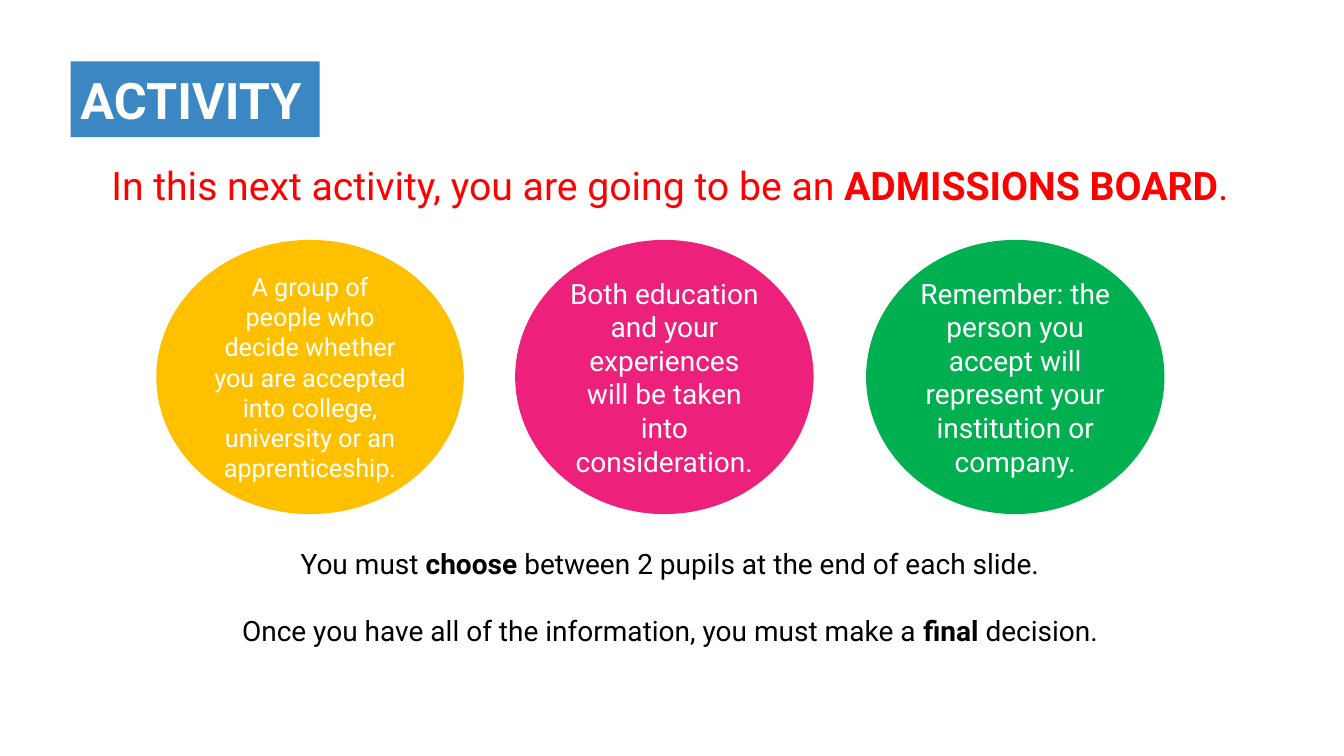
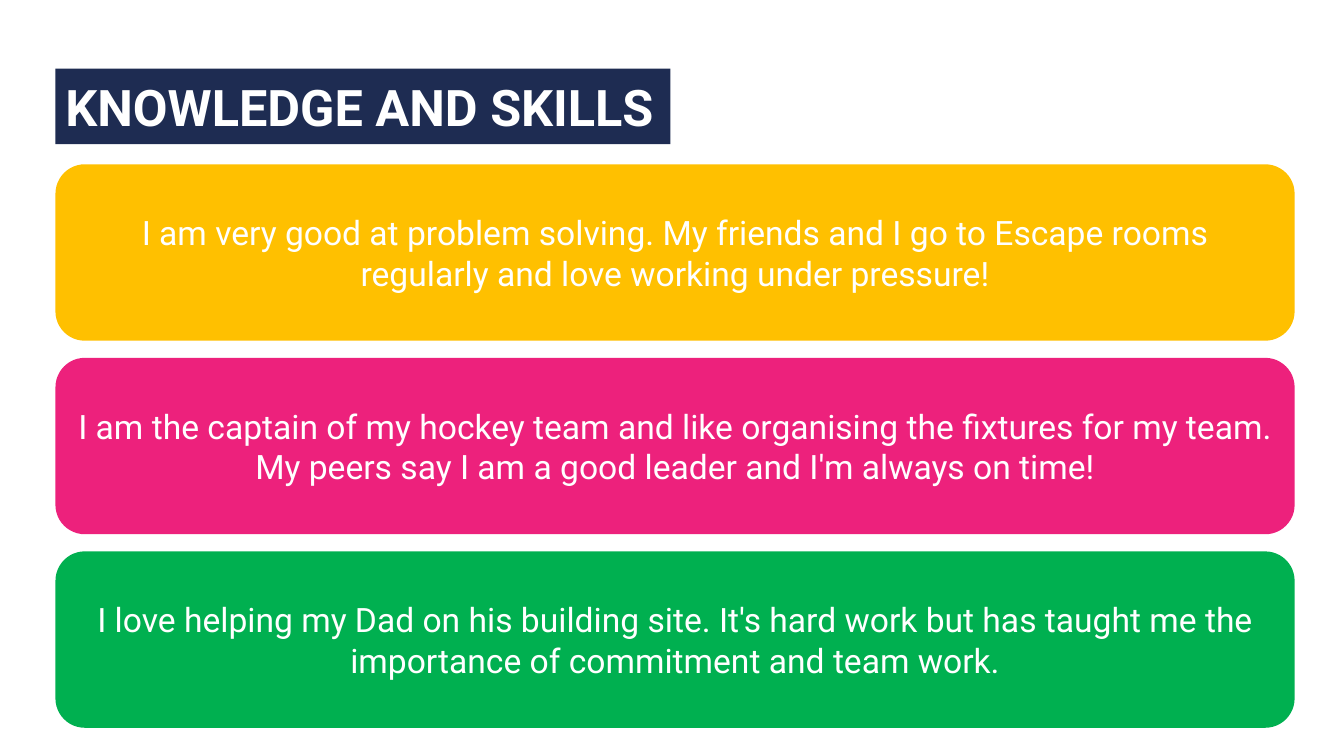
from pptx import Presentation
from pptx.dml.color import RGBColor
from pptx.enum import shapes, text
from pptx.util import Inches, Pt

FONT = "Roboto"
WHITE = RGBColor(0xFF, 0xFF, 0xFF)
BLACK = RGBColor(0x00, 0x00, 0x00)
RED = RGBColor(0xFF, 0x00, 0x00)
BLUE = RGBColor(0x3A, 0x87, 0xC4)
NAVY = RGBColor(0x1E, 0x2C, 0x52)
AMBER = RGBColor(0xFF, 0xC0, 0x00)
PINK = RGBColor(0xED, 0x21, 0x7C)
GREEN = RGBColor(0x00, 0xB0, 0x50)

RECTANGLE = shapes.MSO_SHAPE.RECTANGLE
OVAL = shapes.MSO_SHAPE.OVAL
ROUNDED = shapes.MSO_SHAPE.ROUNDED_RECTANGLE
LEFT = text.PP_ALIGN.LEFT
CENTER = text.PP_ALIGN.CENTER


def add_panel(slide, kind, box, fill, words, size, bold=False, align=CENTER):
    shape = slide.shapes.add_shape(kind, *map(Inches, box))
    shape.shadow.inherit = False
    shape.fill.solid()
    shape.fill.fore_color.rgb = fill
    shape.line.fill.background()
    shape.text_frame.word_wrap = True
    shape.text_frame.vertical_anchor = text.MSO_ANCHOR.MIDDLE
    paragraph = shape.text_frame.paragraphs[0]
    paragraph.text = words
    paragraph.alignment = align
    paragraph.font.name = FONT
    paragraph.font.size = Pt(size)
    paragraph.font.bold = bold
    paragraph.font.color.rgb = WHITE


def add_lines(slide, box, lines, size, color):
    frame = slide.shapes.add_textbox(*map(Inches, box)).text_frame
    frame.word_wrap = True
    for index, (before, strong, after) in enumerate(lines):
        paragraph = frame.add_paragraph() if index else frame.paragraphs[0]
        paragraph.alignment = CENTER
        if index:
            paragraph.space_before = Pt(24)
        paragraph.font.name = FONT
        paragraph.font.size = Pt(size)
        paragraph.font.color.rgb = color
        for words in (before, strong, after):
            run = paragraph.add_run()
            run.text = words
            if words == strong:
                run.font.bold = True


presentation = Presentation()
presentation.slide_width = Inches(13.33)
presentation.slide_height = Inches(7.5)
blank = presentation.slide_layouts[6]

activity = presentation.slides.add_slide(blank)
add_lines(activity, (0.48, 1.55, 12.33, 0.57), [
    ("In this next activity, you are going to be an ", "ADMISSIONS BOARD", "."),
], 28, RED)
add_panel(activity, RECTANGLE, (0.7, 0.61, 2.47, 0.75), BLUE, "ACTIVITY", 36, True, LEFT)

circles = [
    (1.55, 3.05, AMBER, 18, "A group of people who decide whether you are accepted "
     "into college, university or an apprenticeship."),
    (5.11, 2.96, PINK, 20, "Both education and your experiences will be taken "
     "into consideration."),
    (8.59, 2.96, GREEN, 20, "Remember: the person you accept will represent your "
     "institution or company."),
]
for left, width, fill, size, words in circles:
    add_panel(activity, OVAL, (left, 2.38, width, 2.72), fill, words, size)

add_lines(activity, (2.09, 5.37, 9.11, 1.11), [
    ("You must ", "choose", " between 2 pupils at the end of each slide."),
    ("Once you have all of the information, you must make a ", "final", " decision."),
], 20, BLACK)

skills = presentation.slides.add_slide(blank)
add_panel(skills, RECTANGLE, (0.55, 0.68, 6.1, 0.75), NAVY, "KNOWLEDGE AND SKILLS", 36, True, LEFT)

statements = [
    (AMBER, "I am very good at problem solving. My friends and I go to Escape rooms "
     "regularly and love working under pressure!"),
    (PINK, "I am the captain of my hockey team and like organising the fixtures for "
     "my team. My peers say I am a good leader and I'm always on time!"),
    (GREEN, "I love helping my Dad on his building site. It's hard work but has taught "
     "me the importance of commitment and team work."),
]
for row, (fill, words) in enumerate(statements):
    add_panel(skills, ROUNDED, (0.55, 1.63 + row * 1.92, 12.29, 1.75), fill, words, 24)

presentation.save("out.pptx")
